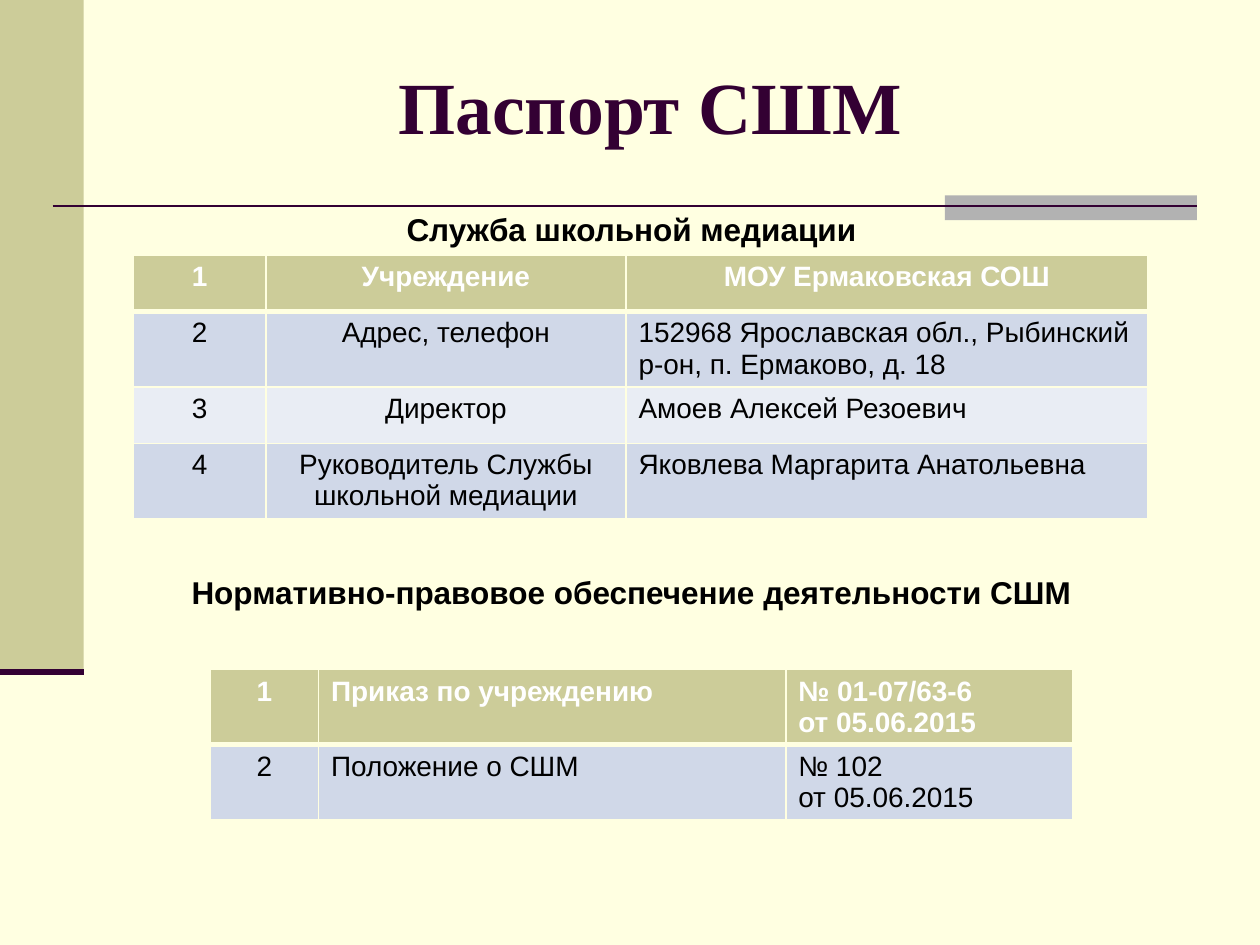
from lxml import etree
from pptx import Presentation
from pptx.dml.color import RGBColor
from pptx.enum import shapes, text
from pptx.oxml import ns
from pptx.util import Cm, Pt

CREAM = RGBColor(0xFF, 0xFF, 0xE1)
OLIVE = RGBColor(0xCC, 0xCC, 0x99)
GREY = RGBColor(0xB2, 0xB2, 0xB2)
PLUM = RGBColor(0x33, 0x00, 0x33)
BLACK = RGBColor(0x00, 0x00, 0x00)
WHITE = RGBColor(0xFF, 0xFF, 0xFF)
BANDS = [RGBColor(0xD0, 0xD8, 0xE8), RGBColor(0xE9, 0xED, 0xF4)]
CENTER, LEFT = text.PP_ALIGN.CENTER, text.PP_ALIGN.LEFT

TITLE = "Паспорт СШМ"
# heading, space before in points
HEADINGS = [
    ("Служба школьной медиации", 3.6),
    ("Нормативно-правовое обеспечение деятельности СШМ", 186),
]
# "centered" counts the leading columns that are centred, in the header and below
TABLES = [
    {
        "at": (2.69, 5.14),
        "columns": [2.67, 7.26, 10.52],
        "heights": [1.14, 1.52, 1.14, 1.52],
        "centered": (3, 2),
        "rows": [
            ("1", "Учреждение", "МОУ Ермаковская СОШ"),
            ("2", "Адрес, телефон",
             "152968 Ярославская обл., Рыбинский р-он, п. Ермаково, д. 18"),
            ("3", "Директор", "Амоев Алексей Резоевич"),
            ("4", "Руководитель Службы школьной медиации",
             "Яковлева Маргарита Анатольевна"),
        ],
    },
    {
        "at": (4.24, 13.5),
        "columns": [2.18, 9.42, 5.79],
        "heights": [1.5, 1.5],
        "centered": (1, 1),
        "rows": [
            ("1", "Приказ по учреждению", "№ 01-07/63-6\nот 05.06.2015"),
            ("2", "Положение о СШМ", "№ 102\nот 05.06.2015"),
        ],
    },
]
# left, top, width, height, colour
BLOCKS = [(0, 0, 1.69, 13.55, OLIVE), (19.05, 3.94, 5.08, 0.5, GREY)]
# left, right, y, line width in points
RULES = [(1.06, 24.13, 4.15, 1.5), (0, 1.69, 13.55, 3.5)]


def add_run(paragraph, words, size, color, bold=True, font="Arial"):
    run = paragraph.add_run()
    run.text = words
    run.font.name, run.font.size = font, Pt(size)
    run.font.bold, run.font.color.rgb = bold, color


def place(shape, left, top, width, height):
    shape.left, shape.top = Cm(left), Cm(top)
    shape.width, shape.height = Cm(width), Cm(height)


def add_border(cell, side, points):
    line = etree.SubElement(cell._tc.get_or_add_tcPr(), ns.qn(f"a:ln{side}"),
                            w=str(Pt(points)))
    fill = etree.SubElement(line, ns.qn("a:solidFill"))
    etree.SubElement(fill, ns.qn("a:srgbClr"), val=str(CREAM))


def add_decor(slide):
    for left, top, width, height, color in BLOCKS:
        block = slide.shapes.add_shape(shapes.MSO_SHAPE.RECTANGLE, Cm(left),
                                       Cm(top), Cm(width), Cm(height))
        block.shadow.inherit = False
        block.fill.solid()
        block.fill.fore_color.rgb = color
        block.line.fill.background()
    for left, right, y, points in RULES:
        rule = slide.shapes.add_connector(shapes.MSO_CONNECTOR.STRAIGHT,
                                          Cm(left), Cm(y), Cm(right), Cm(y))
        rule.line.color.rgb, rule.line.width = PLUM, Pt(points)
        etree.SubElement(rule._element.spPr, ns.qn("a:effectLst"))


def fill_placeholders(slide):
    title, body = slide.placeholders
    place(title, 2.31, 0.71, 21.59, 2.82)
    title.text_frame.vertical_anchor = text.MSO_ANCHOR.MIDDLE
    heading = title.text_frame.paragraphs[0]
    heading.alignment = CENTER
    add_run(heading, TITLE, 42, PLUM, font="Times New Roman")

    place(body, 1.3, 4.11, 22.86, 14.2)
    frame = body.text_frame
    frame.auto_size = text.MSO_AUTO_SIZE.NONE
    for i, (words, space) in enumerate(HEADINGS):
        paragraph = frame.add_paragraph() if i else frame.paragraphs[0]
        paragraph.alignment, paragraph.space_before = CENTER, Pt(space)
        properties = paragraph._p.get_or_add_pPr()
        properties.set("marL", "0")
        properties.set("indent", "0")
        etree.SubElement(properties, ns.qn("a:buNone"))
        add_run(paragraph, words, 18, BLACK)


def fill_cell(cell, words, row, alignment):
    header = row == 0
    for side, points in (("L", 1), ("R", 1), ("T", 3 if row == 1 else 1),
                         ("B", 3 if header else 1)):
        add_border(cell, side, points)
    cell.fill.solid()
    cell.fill.fore_color.rgb = OLIVE if header else BANDS[(row - 1) % 2]
    for i, line in enumerate(words.split("\n")):
        frame = cell.text_frame
        paragraph = frame.add_paragraph() if i else frame.paragraphs[0]
        paragraph.alignment = alignment
        add_run(paragraph, line, 16, WHITE if header else BLACK, header)


def add_grid(slide, data):
    left, top = data["at"]
    columns, heights, rows = data["columns"], data["heights"], data["rows"]
    table = slide.shapes.add_table(len(rows), len(columns), Cm(left), Cm(top),
                                   Cm(sum(columns)), Cm(sum(heights))).table
    for column, width in zip(table.columns, columns):
        column.width = Cm(width)
    for r, (height, row) in enumerate(zip(heights, rows)):
        table.rows[r].height = Cm(height)
        centered = data["centered"][min(r, 1)]
        for c, words in enumerate(row):
            fill_cell(table.cell(r, c), words, r,
                      CENTER if c < centered else LEFT)


def main():
    deck = Presentation()
    deck.slide_width, deck.slide_height = Cm(25.4), Cm(19.05)
    slide = deck.slides.add_slide(deck.slide_layouts[1])
    slide.background.fill.solid()
    slide.background.fill.fore_color.rgb = CREAM
    add_decor(slide)
    fill_placeholders(slide)
    for data in TABLES:
        add_grid(slide, data)
    deck.save("out.pptx")


if __name__ == "__main__":
    main()
